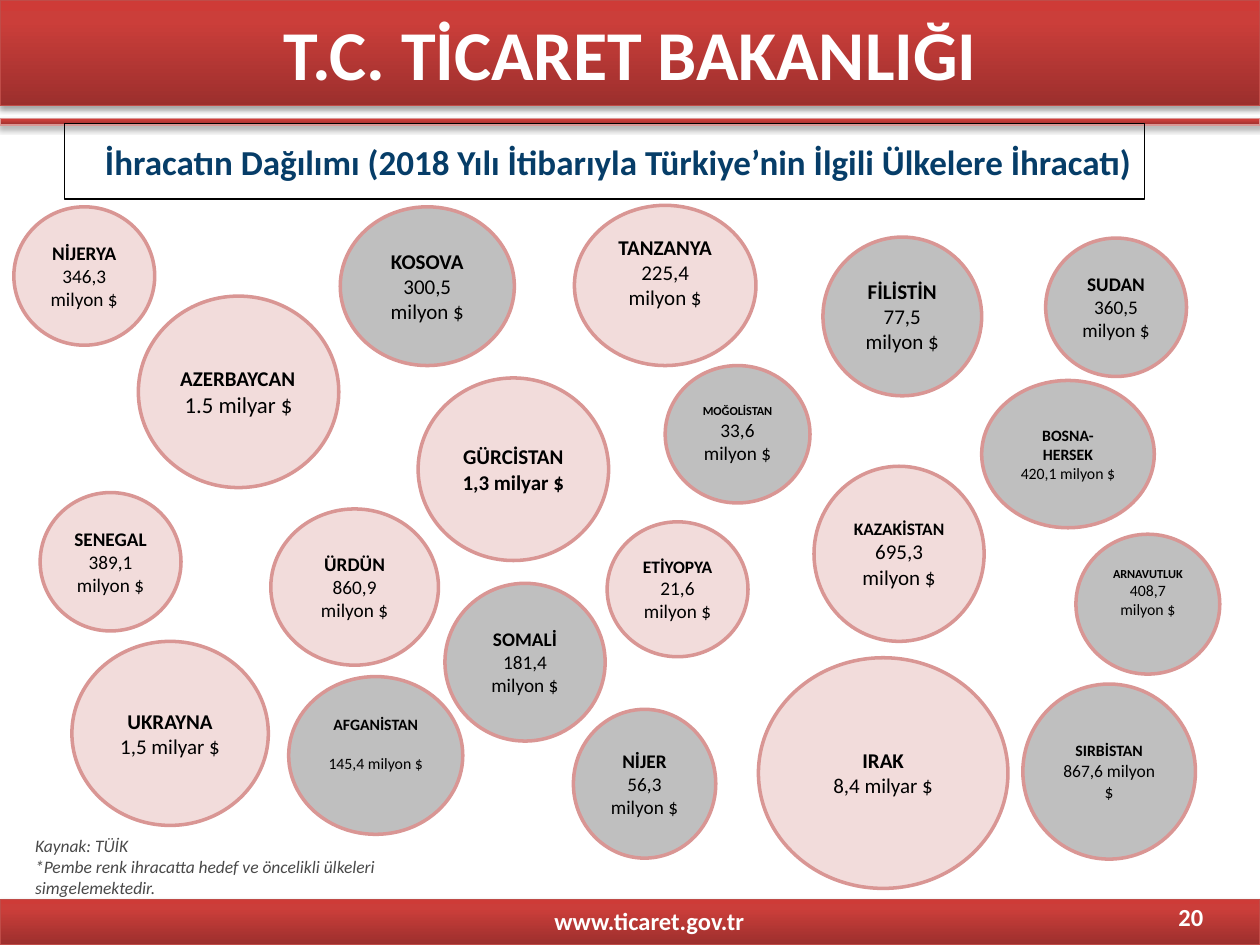
from copy import deepcopy

from lxml import etree
from pptx import Presentation
from pptx.dml.color import RGBColor
from pptx.enum.shapes import MSO_SHAPE
from pptx.enum.text import MSO_ANCHOR, MSO_AUTO_SIZE, PP_ALIGN
from pptx.oxml.ns import qn
from pptx.util import Cm, Pt

RECTANGLE, OVAL = MSO_SHAPE.RECTANGLE, MSO_SHAPE.OVAL
LEFT, CENTER, RIGHT = PP_ALIGN.LEFT, PP_ALIGN.CENTER, PP_ALIGN.RIGHT
TOP, MIDDLE = MSO_ANCHOR.TOP, MSO_ANCHOR.MIDDLE
NO_AUTOFIT = MSO_AUTO_SIZE.NONE

WHITE = RGBColor(0xFF, 0xFF, 0xFF)
BLACK = RGBColor(0, 0, 0)
NAVY = RGBColor(0x06, 0x3D, 0x68)
GREY_TEXT = RGBColor(0x49, 0x49, 0x49)
PINK = RGBColor(0xF2, 0xDC, 0xDB)
GREY = RGBColor(0xBF, 0xBF, 0xBF)
ROSE = RGBColor(0xD9, 0x96, 0x94)
BRICK = RGBColor(0xBF, 0x4C, 0x48)
RED_STOPS = [
    (0, RGBColor(0x9C, 0x2F, 0x2D)),
    (0.8, RGBColor(0xCB, 0x3E, 0x3A)),
    (1, RGBColor(0xCE, 0x3B, 0x37)),
]

SLIDE_WIDTH, SLIDE_HEIGHT = 25.4, 19.05
INSET = 0.13

# Country, export value, fill, (left, top, width, height), name size, value size
BUBBLES = [
    ("AZERBAYCAN", "1.5 milyar $", PINK, (2.79, 5.97, 4.04, 3.86), 12, 13),
    ("TANZANYA", "225,4 milyon $", PINK, (11.58, 4.14, 3.66, 3.23), 12, 12),
    ("UKRAYNA", "1,5 milyar $", PINK, (1.45, 12.93, 3.96, 3.71), 12, 12),
    ("FİLİSTİN", "77,5 milyon $", GREY, (16.59, 4.78, 3.2, 3.2), 12, 12),
    ("IRAK", "8,4 milyar $", PINK, (15.29, 13.26, 5.03, 4.65), 12, 12),
    ("KOSOVA", "300,5 milyon $", GREY, (6.86, 4.17, 3.51, 3.2), 12, 12),
    ("GÜRCİSTAN", "1,3 milyar $", PINK, (8.43, 7.62, 3.84, 3.68), 12, 12),
    ("KAZAKİSTAN", "695,3 milyon $", PINK, (16.41, 9.4, 3.43, 3.53), 10, 12),
    ("SIRBİSTAN", "867,6 milyon $", GREY, (20.62, 13.79, 3.48, 3.53), 9, 10),
    ("ARNAVUTLUK", "408,7 milyon $", GREY, (21.69, 10.77, 2.9, 2.82), 7, 9),
    ("SUDAN", "360,5 milyon $", GREY, (21.08, 4.8, 2.84, 2.79), 11, 11),
    ("ETİYOPYA", "21,6 milyon $", PINK, (12.24, 10.52, 2.84, 2.72), 10, 11),
    ("ÜRDÜN", "860,9 milyon $", PINK, (5.46, 10.26, 3.38, 3.15), 11, 11),
    ("AFGANİSTAN", "145,4 milyon $", GREY, (5.82, 13.64, 3.51, 3.18), 9, 9),
    ("SENEGAL", "389,1 milyon $", PINK, (0.81, 9.93, 2.84, 2.79), 11, 11),
    ("NİJERYA", "346,3 milyon $", PINK, (0.28, 4.17, 2.84, 2.79), 11, 11),
    ("BOSNA-HERSEK", "420,1 milyon $", GREY, (19.79, 7.67, 3.48, 2.97), 9, 9),
    ("MOĞOLİSTAN", "33,6 milyon $", GREY, (13.41, 7.37, 2.92, 2.77), 7, 11),
    ("NİJER", "56,3 milyon $", GREY, (11.56, 14.3, 2.87, 3), 11, 11),
    ("SOMALİ", "181,4 milyon $", GREY, (8.97, 11.76, 3.23, 3.18), 11, 11),
]
# Departures from the usual bubble layout
VARIATIONS = {
    "AZERBAYCAN": {"name_align": LEFT},
    "GÜRCİSTAN": {"value_bold": True},
    "TANZANYA": {"lift": 0.52},
    "ARNAVUTLUK": {"lift": 0.47},
    "AFGANİSTAN": {"lift": 0.47, "gap": 11},
}


class ExportSlide:
    """Holds the style and the current slide."""

    font_name = "Calibri"

    def __init__(self, presentation):
        self.slide = presentation.slides.add_slide(presentation.slide_layouts[5])
        self.shapes = self.slide.shapes

    def set_text(self, shape, lines, color, align=CENTER, anchor=MIDDLE, **look):
        """Each line is a text with the font values that are its own."""
        frame = shape.text_frame
        frame.auto_size = NO_AUTOFIT
        frame.word_wrap = True
        frame.vertical_anchor = anchor
        for index, (text, own_look) in enumerate(lines):
            paragraph = frame.paragraphs[0] if index == 0 else frame.add_paragraph()
            paragraph.alignment = align
            run = paragraph.add_run()
            run.text = text
            values = {"name": self.font_name, **look, **own_look}
            for attribute, value in values.items():
                setattr(run.font, attribute, value)
            run.font.color.rgb = color
        return frame

    def outlined(self, kind, box, line_color, line_width):
        shape = self.shapes.add_shape(kind, *map(Cm, box))
        shape.shadow.inherit = False
        shape.line.color.rgb = line_color
        shape.line.width = Pt(line_width)
        return shape

    def band(self, top, height, line_color=BRICK):
        band = self.outlined(RECTANGLE, (0, top, SLIDE_WIDTH, height), line_color, 0.75)
        # Red gradient, dark at the bottom
        band.fill.gradient()
        band.fill.gradient_angle = 90
        properties = band._element.spPr
        stop_list = properties.find(".//" + qn("a:gsLst"))
        stop_list.append(deepcopy(stop_list[-1]))
        for stop, (position, color) in zip(band.fill.gradient_stops, RED_STOPS):
            stop.position = position
            stop.color.rgb = color
        # Soft shadow below
        shadow = etree.SubElement(
            properties.find(qn("a:effectLst")), qn("a:outerShdw"),
            blurRad=str(Pt(3.1)), dist=str(Pt(1.8)), dir="5400000", rotWithShape="0")
        shade = etree.SubElement(shadow, qn("a:srgbClr"), val=str(BLACK))
        etree.SubElement(shade, qn("a:alpha"), val="35000")
        return band

    def title(self, text, box):
        title = self.shapes.title
        for attribute, length in zip(("left", "top", "width", "height"), box):
            setattr(title, attribute, Cm(length))
        title.line.color.rgb = BLACK
        title.line.width = Pt(0.75)
        self.set_text(title, [(text, {})], NAVY, RIGHT, size=Pt(20), bold=True)
        # Bring the title in front of the bands
        self.shapes._spTree.append(title._element)

    def bubble(self, country, value, fill, box, name_size, value_size,
               name_align=CENTER, value_bold=False, lift=0, gap=0):
        bubble = self.outlined(OVAL, box, ROSE, 2)
        bubble.fill.solid()
        bubble.fill.fore_color.rgb = fill
        lines = [(country, {"size": Pt(name_size), "bold": True}),
                 (value, {"size": Pt(value_size), "bold": value_bold})]
        frame = self.set_text(bubble, lines, BLACK)
        frame.margin_bottom = Cm(INSET + lift)
        name_line, value_line = frame.paragraphs
        name_line.alignment = name_align
        value_line.space_before = Pt(gap)

    def label(self, texts, box, color, **look):
        label = self.shapes.add_textbox(*map(Cm, box))
        self.set_text(label, [(text, {}) for text in texts], color, **look)


def main():
    presentation = Presentation()
    presentation.slide_width = Cm(SLIDE_WIDTH)
    presentation.slide_height = Cm(SLIDE_HEIGHT)
    page = ExportSlide(presentation)

    # Ministry header and heading
    header = page.band(0, 2.13)
    page.set_text(header, [("T.C. TİCARET BAKANLIĞI", {})], WHITE, size=Pt(40), bold=True)
    page.band(2.39, 0.13, ROSE)
    page.title("İhracatın Dağılımı (2018 Yılı İtibarıyla Türkiye’nin İlgili Ülkelere İhracatı)",
               (1.3, 2.49, 21.77, 1.52))

    # Exports by country
    for bubble in BUBBLES:
        page.bubble(*bubble, **VARIATIONS.get(bubble[0], {}))

    # Source note
    page.label(["Kaynak: TÜİK",
                "*Pembe renk ihracatta hedef ve öncelikli ülkeleri simgelemektedir."],
               (0.46, 16.71, 7.57, 1.55), GREY_TEXT,
               align=LEFT, anchor=TOP, size=Pt(10), italic=True)

    # Footer
    page.band(18.14, 0.91)
    footer_look = {"size": Pt(14), "bold": True}
    page.label(["www.ticaret.gov.tr"], (10.13, 18.14, 5.92, 0.86), WHITE, **footer_look)
    page.label(["20"], (18.59, 18.06, 5.92, 0.86), WHITE, align=RIGHT, **footer_look)

    presentation.save("out.pptx")


if __name__ == "__main__":
    main()
